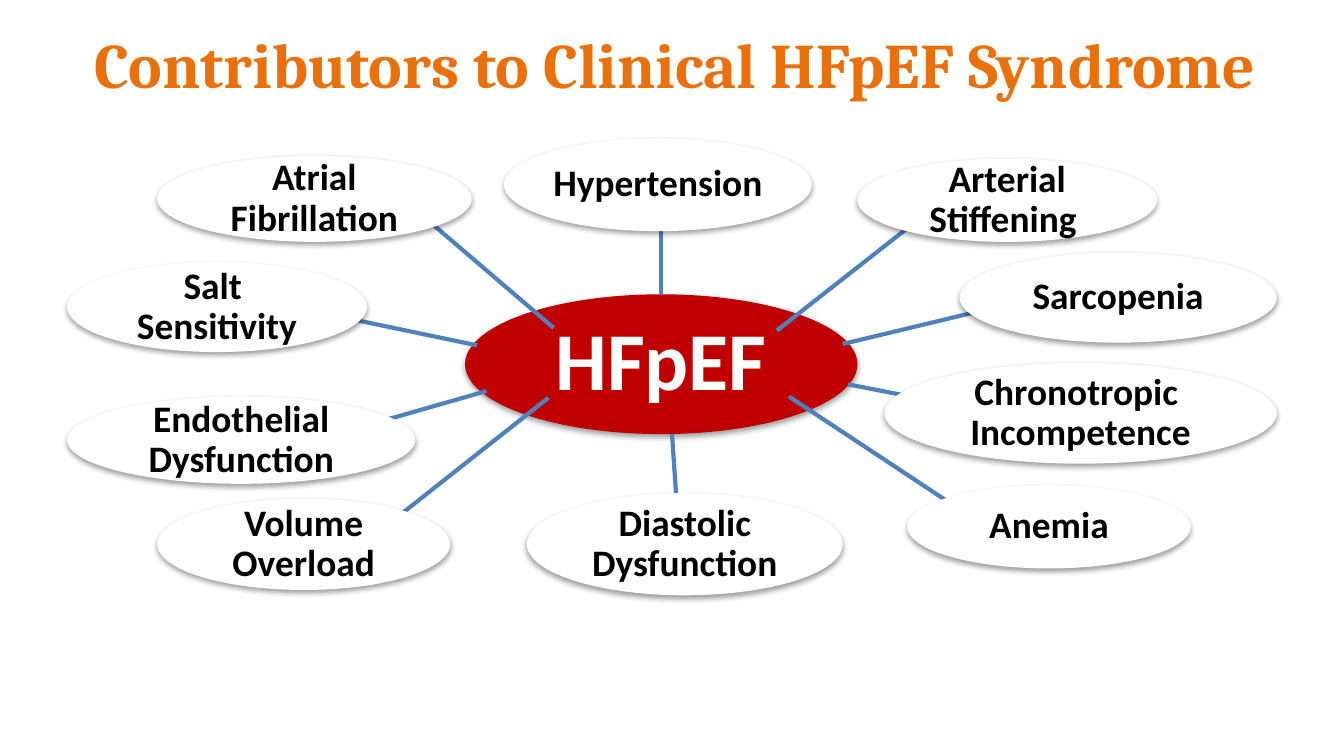
from dataclasses import dataclass

from lxml import etree
from pptx import Presentation
from pptx.dml.color import RGBColor
from pptx.enum.shapes import MSO_CONNECTOR, MSO_SHAPE
from pptx.enum.text import MSO_ANCHOR, PP_ALIGN
from pptx.oxml.ns import qn
from pptx.util import Pt

STRAIGHT = MSO_CONNECTOR.STRAIGHT
OVAL = MSO_SHAPE.OVAL
MIDDLE = MSO_ANCHOR.MIDDLE
CENTER = PP_ALIGN.CENTER

EMU_PER_PX = 9144  # 100 px to the inch
ORANGE = RGBColor(0xE9, 0x70, 0x0A)
RED = RGBColor(0xC0, 0x00, 0x00)
BLUE = RGBColor(0x4F, 0x81, 0xBD)
WHITE = RGBColor(0xFF, 0xFF, 0xFF)
BLACK = RGBColor(0x00, 0x00, 0x00)


@dataclass(frozen=True)
class Bubble:
    text: str
    box: tuple[int, int, int, int]  # left, top, width, height
    fill: RGBColor = WHITE
    color: RGBColor = BLACK
    size: int = 20


@dataclass(frozen=True)
class Spoke:
    start: tuple[int, int]  # on the hub
    end: tuple[int, int]  # at the contributor


HUB = Bubble("HFpEF", (346, 219, 292, 104), RED, WHITE, 44)

CONTRIBUTORS = [
    (Spoke((492, 219), (492, 172)), Bubble("Hypertension", (375, 103, 229, 69))),
    (Spoke((578, 246), (694, 155)), Bubble("Arterial\nStiffening ", (638, 118, 223, 62))),
    (Spoke((627, 256), (727, 232)), Bubble("Sarcopenia", (714, 188, 236, 67))),
    (Spoke((631, 286), (672, 294)), Bubble("Chronotropic \nIncompetence", (658, 270, 292, 75))),
    (Spoke((587, 295), (720, 383)), Bubble("Anemia", (675, 361, 211, 62))),
    (Spoke((500, 323), (503, 367)), Bubble("Diastolic Dysfunction", (392, 367, 235, 76))),
    (Spoke((408, 296), (284, 394)), Bubble("Volume Overload", (117, 371, 218, 68))),
    (Spoke((362, 291), (285, 313)), Bubble("Endothelial Dysfunction", (50, 295, 259, 65))),
    (Spoke((355, 257), (264, 238)), Bubble("Salt \nSensitivity", (50, 195, 223, 67))),
    (Spoke((412, 244), (308, 155)), Bubble("Atrial Fibrillation", (117, 116, 234, 64))),
]


def px(n: int) -> int:
    return n * EMU_PER_PX


def write(tf, text: str, font: str, size: int, color: RGBColor) -> None:
    tf.text = text
    tf.word_wrap = True
    tf.vertical_anchor = MIDDLE
    for p in tf.paragraphs:
        p.alignment = CENTER
        for r in p.runs:
            r.font.name = font
            r.font.size = Pt(size)
            r.font.bold = True
            r.font.color.rgb = color


def add_soft_shadow(s) -> None:
    s.shadow.inherit = False
    effects = s._element.spPr.find(qn("a:effectLst"))
    shadow = etree.SubElement(effects, qn("a:outerShdw"), blurRad="40000",
                              dist="20000", dir="5400000", rotWithShape="0")
    color = etree.SubElement(shadow, qn("a:srgbClr"), val=str(BLACK))
    etree.SubElement(color, qn("a:alpha"), val="38000")


def draw_bubble(slide, bubble: Bubble) -> None:
    s = slide.shapes.add_shape(OVAL, *map(px, bubble.box))
    s.fill.solid()
    s.fill.fore_color.rgb = bubble.fill
    s.line.fill.background()
    add_soft_shadow(s)
    tf = s.text_frame
    tf.margin_left = tf.margin_right = tf.margin_top = tf.margin_bottom = 0
    write(tf, bubble.text, "Calibri", bubble.size, bubble.color)
    for p in tf.paragraphs:
        p.line_spacing = 0.9


def draw_spoke(slide, spoke: Spoke) -> None:
    s = slide.shapes.add_connector(STRAIGHT, *map(px, spoke.start + spoke.end))
    s.line.color.rgb = BLUE
    s.line.width = Pt(2.25)
    etree.SubElement(s._element.spPr, qn("a:effectLst"))


def main() -> None:
    # Widescreen, 16:9
    prs = Presentation()
    prs.slide_width = px(1000)
    prs.slide_height = px(1000) * 9 // 16
    slide = prs.slides.add_slide(prs.slide_layouts[5])

    # Title
    title = slide.shapes.title
    title.left, title.top, title.width, title.height = map(px, (2, 0, 1000, 94))
    write(title.text_frame, "Contributors to Clinical HFpEF Syndrome", "Cambria", 34, ORANGE)

    # Hub, then each spoke with its contributor on top
    draw_bubble(slide, HUB)
    for spoke, bubble in CONTRIBUTORS:
        draw_spoke(slide, spoke)
        draw_bubble(slide, bubble)

    prs.save("out.pptx")


if __name__ == "__main__":
    main()
